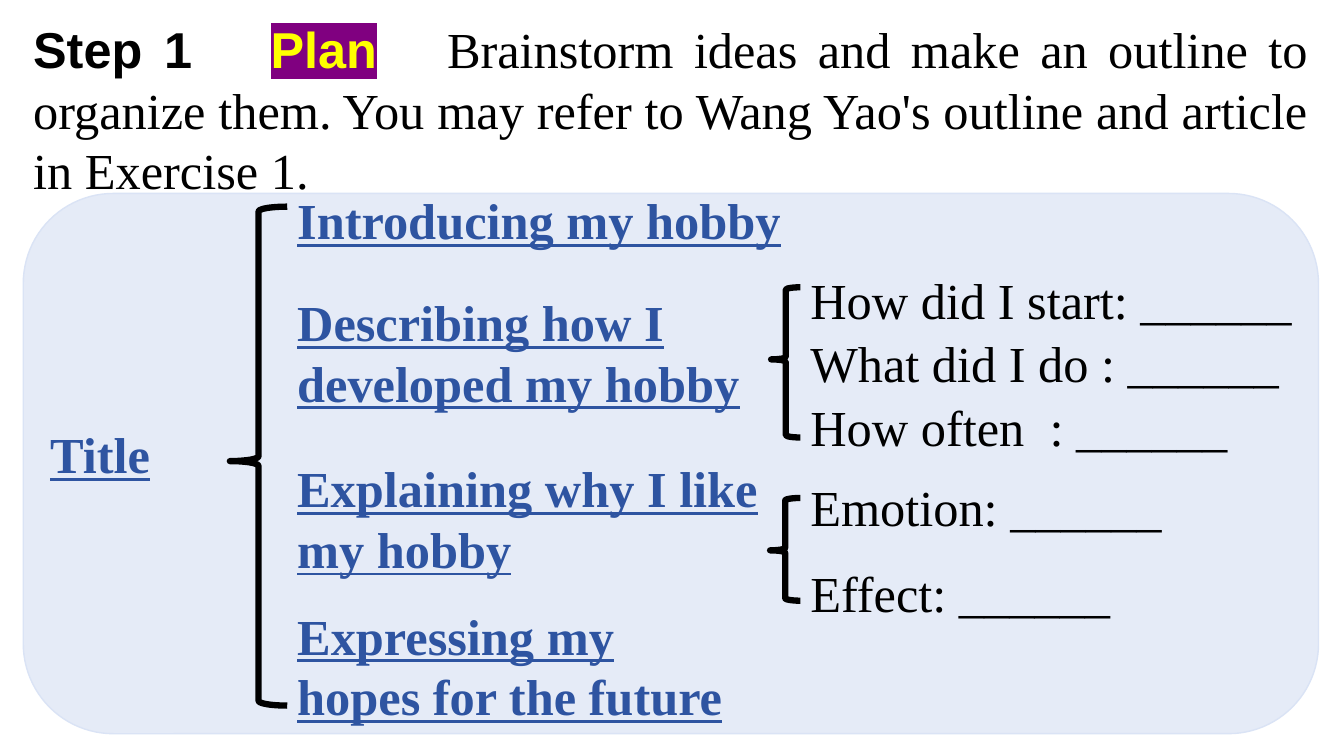
"""Build the hobby article planning slide."""
from lxml import etree
from pptx import Presentation
from pptx.dml.color import RGBColor
from pptx.enum.shapes import MSO_SHAPE
from pptx.enum.text import MSO_AUTO_SIZE, PP_ALIGN
from pptx.oxml.ns import qn
from pptx.util import Pt

ROUND, BRACE = MSO_SHAPE.ROUNDED_RECTANGLE, MSO_SHAPE.LEFT_BRACE
GROW, FIXED = MSO_AUTO_SIZE.SHAPE_TO_FIT_TEXT, MSO_AUTO_SIZE.NONE
LEFT, JUST = PP_ALIGN.LEFT, PP_ALIGN.JUSTIFY
BLACK = RGBColor(0x00, 0x00, 0x00)
BLUE = RGBColor(0x2E, 0x54, 0xA1)
PALE = RGBColor(0xDA, 0xE3, 0xF5)
YELLOW = RGBColor(0xFF, 0xFF, 0x00)
PURPLE = RGBColor(0x80, 0x00, 0x80)

HEAD = {"name": "Arial", "bold": True, "color": BLACK}
MARK = {"name": "Arial", "bold": True, "color": YELLOW}
PLAIN = {"name": "Times New Roman", "bold": False, "color": BLACK}
TOPIC = {"name": "Times New Roman", "bold": True, "underline": True, "color": BLUE}

STEP = [
    ("Step 1\t", HEAD, None),
    ("Plan", MARK, PURPLE),
    ("\tBrainstorm ideas and make an outline to organize them. "
     "You may refer to Wang Yao's outline and article in Exercise 1.", PLAIN, None),
]
STOPS = (164, 290)
TOPICS = [
    ("Introducing my hobby", 131.8, 576, 1),
    ("Describing how I developed my hobby", 204.5, 338.4, 2),
    ("Explaining why I like my hobby", 323.3, 360, 2),
    ("Expressing my hopes for the future", 428.4, 325.4, 2),
]
DETAILS = [
    ("How did I start: ______", 188.6),
    ("What did I do : ______", 234),
    ("How often  : ______", 279.4),
    ("Emotion: ______", 336.2),
    ("Effect: ______", 398.2),
]
BRACES = [
    (164.2, 147.6, 41, 356.4, 0.51),
    (550.8, 205.2, 20.9, 107.3, 0.48),
    (550.1, 355.7, 21.6, 73.4, 0.51),
]
EDGE, WIDE = 16.6, 925.2
TOPIC_X, DETAIL_X, DETAIL_W = 205.2, 571.7, 370
LINE, PAD = 43.2, 7.9


def add_shape(slide, kind, box, color, width):
    """Add an outlined, unfilled shape."""
    shape = slide.shapes.add_shape(kind, *map(Pt, box))
    shape.shadow.inherit = False
    shape.fill.background()
    shape.line.color.rgb = color
    shape.line.width = Pt(width)
    return shape


def add_text(slide, box, runs, align=LEFT, fit=GROW, stops=()):
    """Add one paragraph made of styled runs."""
    frame = slide.shapes.add_textbox(*map(Pt, box)).text_frame
    frame.word_wrap = True
    frame.auto_size = fit
    para = frame.paragraphs[0]
    para.alignment = align
    if stops:
        tabs = etree.SubElement(para._p.get_or_add_pPr(), qn("a:tabLst"))
        for stop in stops:
            etree.SubElement(tabs, qn("a:tab"), pos=str(Pt(stop)), algn="l")
    for text, style, mark in runs:
        run = para.add_run()
        run.text = text
        run.font.size = Pt(36)
        for key, value in style.items():
            if key == "color":
                run.font.color.rgb = value
            else:
                setattr(run.font, key, value)
        if mark:
            light = etree.Element(qn("a:highlight"))
            etree.SubElement(light, qn("a:srgbClr"), val=str(mark))
            run._r.rPr.find(qn("a:solidFill")).addnext(light)


def main():
    """Draw the panel, braces and text, then save."""
    deck = Presentation()
    deck.slide_width, deck.slide_height = Pt(960), Pt(540)
    slide = deck.slides.add_slide(deck.slide_layouts[6])

    panel = add_shape(slide, ROUND, (EDGE, 138.2, WIDE, 385.9), PALE, 1)
    panel.fill.solid()
    panel.fill.fore_color.rgb = PALE
    tint = panel._element.spPr.find(qn("a:solidFill"))[0]
    etree.SubElement(tint, qn("a:alpha"), val="70000")

    for *box, tip in BRACES:
        brace = add_shape(slide, BRACE, box, BLACK, 4.5)
        brace.adjustments[1] = tip

    add_text(slide, (28.8, 298.8, 102.2, LINE + PAD), [("Title", TOPIC, None)], JUST)
    for text, top, width, rows in TOPICS:
        box = (TOPIC_X, top, width, rows * LINE + PAD)
        add_text(slide, box, [(text, TOPIC, None)])
    for text, top in DETAILS:
        box = (DETAIL_X, top, DETAIL_W, LINE + PAD)
        add_text(slide, box, [(text, PLAIN, None)])
    add_text(slide, (EDGE, 9.4, WIDE, 128.9), STEP, JUST, FIXED, STOPS)

    deck.save("out.pptx")


if __name__ == "__main__":
    main()
